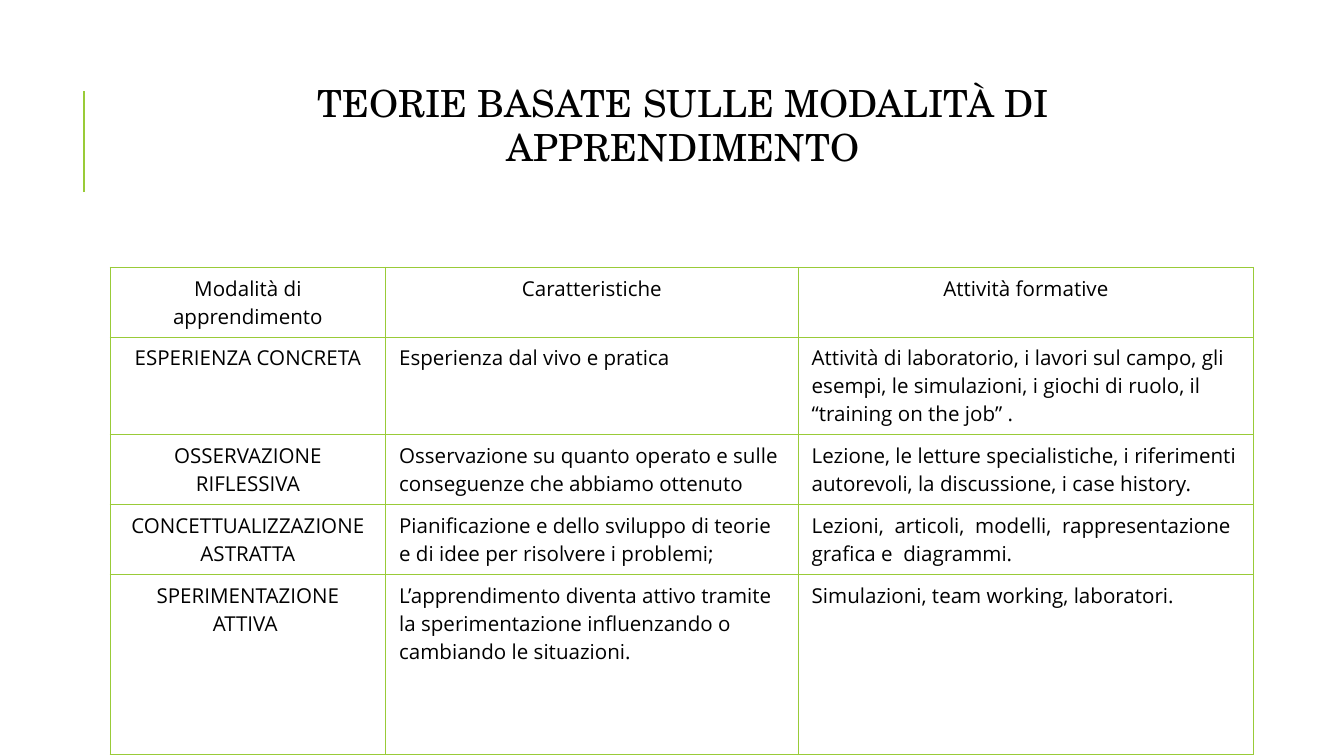
from lxml.etree import SubElement
from pptx import Presentation
from pptx.dml.color import RGBColor
from pptx.enum.shapes import MSO_CONNECTOR
from pptx.enum.text import MSO_ANCHOR, PP_ALIGN
from pptx.oxml import parse_xml
from pptx.oxml.ns import nsdecls, qn
from pptx.util import Inches, Pt

GREEN = RGBColor(0x99, 0xCB, 0x38)
BLACK = RGBColor(0x00, 0x00, 0x00)
COLUMNS = [2.05, 3.07, 3.39]
ROWS = [0.52, 0.72, 0.52, 0.52, 1.34]
CELLS = [
    ["Modalità di apprendimento", "Caratteristiche", "Attività formative"],
    ["ESPERIENZA CONCRETA", "Esperienza dal vivo e pratica",
     "Attività di laboratorio, i lavori sul campo, gli esempi, le simulazioni, "
     "i giochi di ruolo, il “training on the job” ."],
    ["OSSERVAZIONE RIFLESSIVA",
     "Osservazione su quanto operato e sulle conseguenze che abbiamo ottenuto",
     "Lezione, le letture specialistiche, i riferimenti autorevoli, "
     "la discussione, i case history."],
    ["CONCETTUALIZZAZIONE ASTRATTA",
     "Pianificazione e dello sviluppo di teorie e di idee per risolvere i problemi;",
     "Lezioni,  articoli,  modelli,  rappresentazione grafica e  diagrammi."],
    ["SPERIMENTAZIONE ATTIVA ",
     "L’apprendimento diventa attivo tramite la sperimentazione influenzando "
     "o cambiando le situazioni.",
     "Simulazioni, team working, laboratori."],
]


def style_text(paragraph, font_name, size, alignment):
    paragraph.alignment = alignment
    paragraph.font.name = font_name
    paragraph.font.size = Pt(size)
    paragraph.font.color.rgb = BLACK


def add_borders(cell):
    properties = cell._tc.get_or_add_tcPr()
    for position, side in enumerate(("lnL", "lnR", "lnT", "lnB")):
        properties.insert(position, parse_xml(
            f'<a:{side} {nsdecls("a")} w="{Pt(0.75)}"><a:solidFill>'
            f'<a:srgbClr val="{GREEN}"/></a:solidFill></a:{side}>'))


# Widescreen slide, 16:9
presentation = Presentation()
presentation.slide_width = Inches(10)
presentation.slide_height = presentation.slide_width * 9 // 16
slide = presentation.slides.add_slide(presentation.slide_layouts[6])

# Accent line beside the title
accent_x = presentation.slide_width // 16
accent = slide.shapes.add_connector(
    MSO_CONNECTOR.STRAIGHT, accent_x, Inches(1.43), accent_x, Inches(0.68))
accent.line.color.rgb = GREEN
accent.line.width = Pt(1.5)
SubElement(accent._element.spPr, qn("a:effectLst"))

# Table of learning modes
table = slide.shapes.add_table(
    len(ROWS), len(COLUMNS), Inches(0.82), Inches(1.99),
    Inches(sum(COLUMNS)), Inches(sum(ROWS))).table
table.first_row = False
table.horz_banding = False
for column, width in zip(table.columns, COLUMNS):
    column.width = Inches(width)
for row_index, (row, height) in enumerate(zip(table.rows, ROWS)):
    row.height = Inches(height)
    for column_index, cell in enumerate(row.cells):
        cell.text = CELLS[row_index][column_index]
        cell.fill.background()
        add_borders(cell)
        is_heading = row_index == 0 or column_index == 0
        style_text(cell.text_frame.paragraphs[0], "Open Sans", 11,
                   PP_ALIGN.CENTER if is_heading else PP_ALIGN.LEFT)

# Title
title = slide.shapes.add_textbox(Inches(1.1), Inches(0.27), Inches(7.97), Inches(1.09))
frame = title.text_frame
frame.word_wrap = True
frame.vertical_anchor = MSO_ANCHOR.BOTTOM
frame.margin_left = frame.margin_right = Inches(0.1)
frame.margin_top = frame.margin_bottom = Inches(0.1)
frame.text = "TEORIE BASATE SULLE MODALITÀ DI APPRENDIMENTO"
style_text(frame.paragraphs[0], "TeX Gyre Schola", 20, PP_ALIGN.CENTER)

presentation.save("out.pptx")
